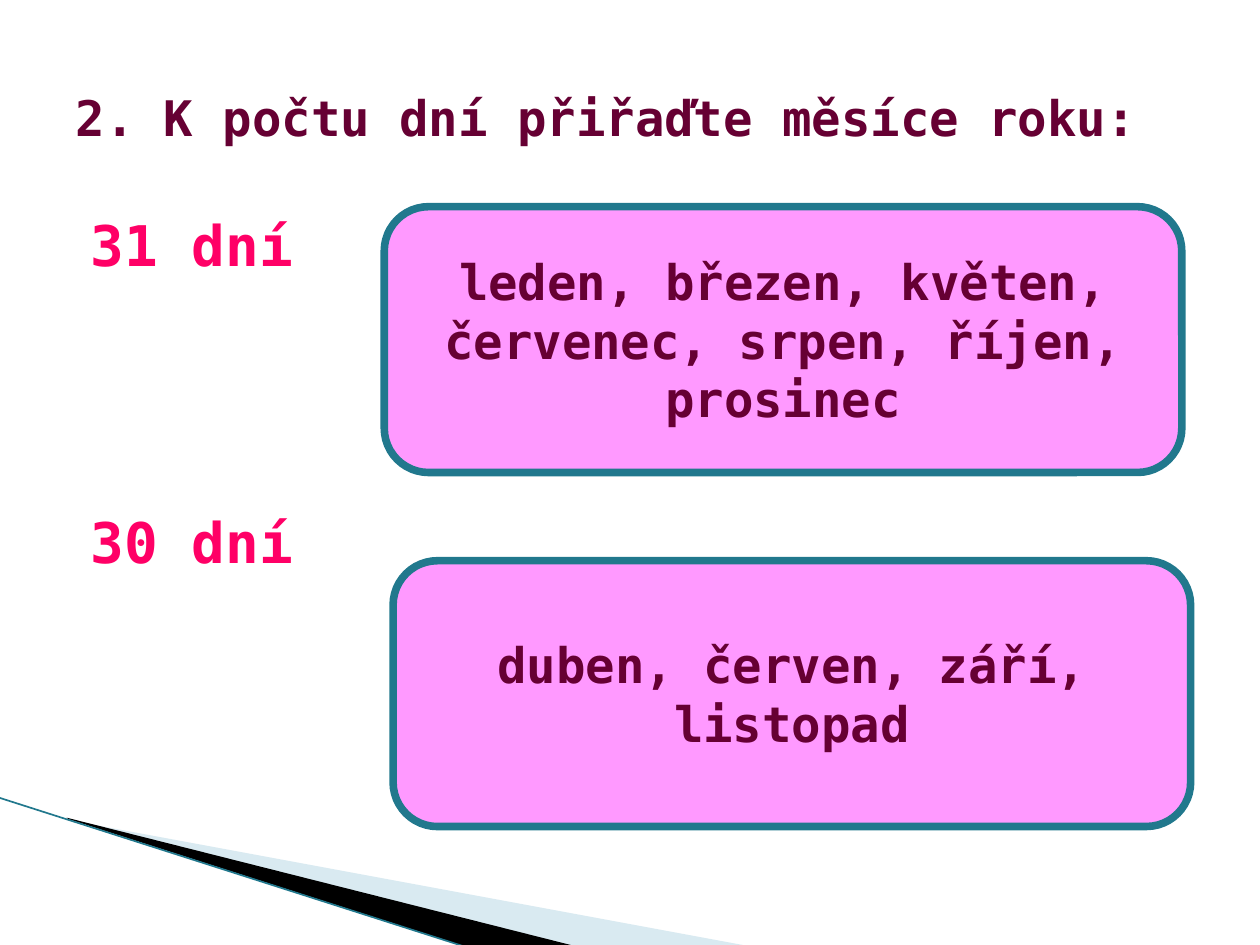
import pptx
import pptx.util
import pptx.dml.color
import pptx.enum.shapes
import pptx.enum.text
import pptx.oxml.ns
from lxml import etree

Inches, Pt = pptx.util.Inches, pptx.util.Pt
Align, Anchor = pptx.enum.text.PP_ALIGN, pptx.enum.text.MSO_ANCHOR
qn = pptx.oxml.ns.qn

FONT = "DejaVu Sans Mono"
PLUM, ROSE, PINK, TEAL = "660033", "FF0066", "FF99FF", "21788D"

TITLE = "2. K počtu dní přiřaďte měsíce roku:"
DAYS = ["31 dní", "30 dní"]
DAY_GAP = 131.5
MONTHS = [
    (3.05, 1.64, "leden, březen, květen, červenec, srpen, říjen, prosinec"),
    (3.12, 4.45, "duben, červen, září, listopad"),
]
BOX = (6.33, 2.11)
# Wedges: frame, corner points (some outside the frame), fill, opacity in percent
WEDGES = [
    ((0.78, 5.47, 4.16, 1.58),
     [(0.55, 6.51), (5.95, 7.51), (4.56, 7.51), (0.55, 6.5)], "A0CBDC", 40),
    ((-0.06, 6.33, 4.16, 0.92),
     [(0.53, 6.49), (4.57, 7.51), (3.72, 7.52), (0.54, 6.5)], "000000", 100),
]
EDGE = (-0.01, 6.33, 3.71, 7.52)


def color(text):
    return pptx.dml.color.RGBColor.from_string(text)


def paint(shape, fill):
    shape.fill.solid()
    shape.fill.fore_color.rgb = color(fill)
    shape.shadow.inherit = False


def place(shape, *area):
    shape.left, shape.top, shape.width, shape.height = map(Inches, area)


def write(par, text, size, tone, align):
    par.alignment = align
    run = par.add_run()
    run.text = text
    font = run.font
    font.name, font.size, font.bold = FONT, Pt(size), True
    font.color.rgb = color(tone)


def reframe(shape, area):
    """Give a freeform a new frame while its outline stays in place."""
    left, top = shape.left, shape.top
    place(shape, *area)
    for spot in shape._element.iter(qn("a:pt")):
        spot.set("x", str(int(spot.get("x")) + left - shape.left))
        spot.set("y", str(int(spot.get("y")) + top - shape.top))
    outline = next(shape._element.iter(qn("a:path")))
    outline.set("w", str(shape.width))
    outline.set("h", str(shape.height))


def add_wedge(shapes, area, points, fill, alpha):
    spots = [(Inches(x), Inches(y)) for x, y in points]
    form = shapes.build_freeform(*spots[0])
    form.add_line_segments(spots[1:], close=True)
    wedge = form.convert_to_shape()
    reframe(wedge, area)
    paint(wedge, fill)
    wedge.line.fill.background()
    if alpha < 100:
        tint = wedge.fill._xPr.find(".//" + qn("a:srgbClr"))
        etree.SubElement(tint, qn("a:alpha")).set("val", str(alpha * 1000))
    return wedge


def add_edge(shapes):
    kind = pptx.enum.shapes.MSO_CONNECTOR.STRAIGHT
    edge = shapes.add_connector(kind, *map(Inches, EDGE))
    edge.line.color.rgb = color(TEAL)
    edge.line.width = Pt(0.95)
    etree.SubElement(edge._element.spPr, qn("a:effectLst"))
    return edge


def add_days(body):
    place(body, 0.5, 1.62, 2.23, 4.95)
    frame = body.text_frame
    frame.auto_size = pptx.enum.text.MSO_AUTO_SIZE.NONE
    for i, text in enumerate(DAYS):
        par = frame.add_paragraph() if i else frame.paragraphs[0]
        props = par._p.get_or_add_pPr()
        props.set("marL", str(Inches(0.4)))
        props.set("indent", str(Inches(-0.28)))
        etree.SubElement(props, qn("a:buNone"))
        par.space_before = Pt(DAY_GAP if i else 0)
        write(par, text, 32, ROSE, Align.LEFT)


def add_box(shapes, left, top, text):
    kind = pptx.enum.shapes.MSO_SHAPE.ROUNDED_RECTANGLE
    box = shapes.add_shape(kind, *map(Inches, (left, top, *BOX)))
    paint(box, PINK)
    box.line.color.rgb = color(TEAL)
    box.line.width = Pt(4.33)
    frame = box.text_frame
    frame.word_wrap = True
    frame.vertical_anchor = Anchor.MIDDLE
    write(frame.paragraphs[0], text, 28, PLUM, Align.CENTER)


def main():
    deck = pptx.Presentation()
    deck.slide_width, deck.slide_height = Inches(10), Inches(7.5)
    slide = deck.slides.add_slide(deck.slide_layouts[1])
    shapes = slide.shapes
    title, body = slide.placeholders

    decor = [add_wedge(shapes, *wedge) for wedge in WEDGES]
    decor.append(add_edge(shapes))
    for part in decor:
        title._element.addprevious(part._element)

    place(title, 0.5, 0.3, 9, 1.25)
    title.text_frame.auto_size = pptx.enum.text.MSO_AUTO_SIZE.NONE
    title.text_frame.vertical_anchor = Anchor.MIDDLE
    write(title.text_frame.paragraphs[0], TITLE, 28, PLUM, Align.LEFT)
    add_days(body)
    for left, top, text in MONTHS:
        add_box(shapes, left, top, text)
    deck.save("out.pptx")


if __name__ == "__main__":
    main()
